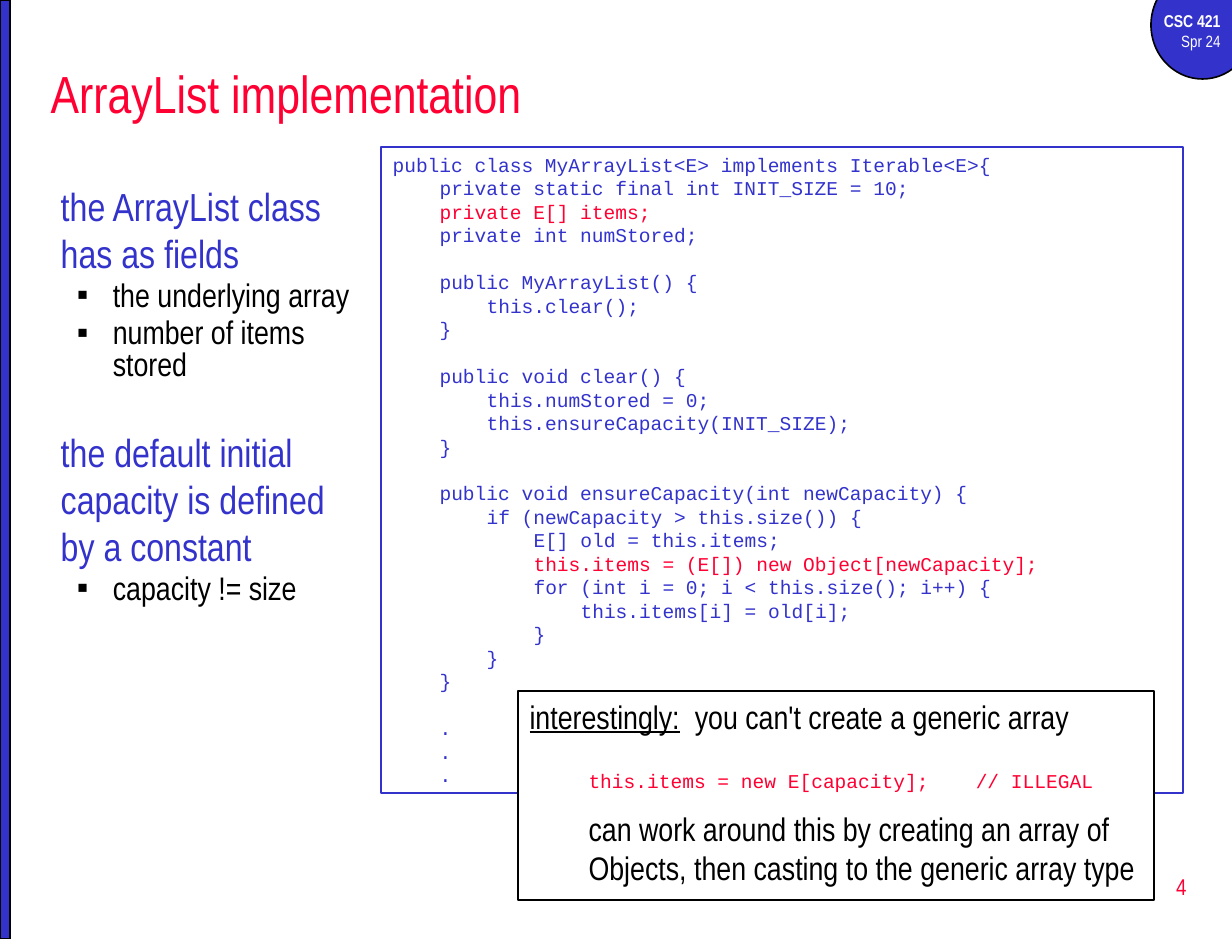
from lxml import etree
from pptx import Presentation
from pptx import util as u
from pptx.dml.color import RGBColor
from pptx.enum import shapes, text
from pptx.oxml.ns import qn

BLUE, RED, BLACK, WHITE = "3333CC", "FF0033", "000000", "FFFFFF"
NARROW, MONO = "Arial Narrow", "Courier New"
SLIDE_WIDTH, SLIDE_HEIGHT = u.Inches(10.5), u.Inches(8)
SCALE = SLIDE_WIDTH / 1232  # EMU in one px
CODE_INDENT = 47            # four monospaced characters

TITLE = "ArrayList implementation"
TOPICS = [
    ("the ArrayList class has as fields",
     ["the underlying array", "number of items stored"]),
    ("the default initial capacity is defined by a constant",
     ["capacity != size"]),
]
# Blocks of code lines: (indent level, code, colour)
CODE = [
    [(0, "public class MyArrayList<E> implements Iterable<E>{", BLUE),
     (1, "private static final int INIT_SIZE = 10;", BLUE),
     (1, "private E[] items;", RED),
     (1, "private int numStored;", BLUE)],
    [(1, "public MyArrayList() {", BLUE),
     (2, "this.clear();", BLUE),
     (1, "}", BLUE)],
    [(1, "public void clear() {", BLUE),
     (2, "this.numStored = 0;", BLUE),
     (2, "this.ensureCapacity(INIT_SIZE);", BLUE),
     (1, "}", BLUE)],
    [(1, "public void ensureCapacity(int newCapacity) {", BLUE),
     (2, "if (newCapacity > this.size()) {", BLUE),
     (3, "E[] old = this.items;", BLUE),
     (3, "this.items = (E[]) new Object[newCapacity];", RED),
     (3, "for (int i = 0; i < this.size(); i++) {", BLUE),
     (4, "this.items[i] = old[i];", BLUE),
     (3, "}", BLUE),
     (2, "}", BLUE),
     (1, "}", BLUE)],
    [(1, ".", BLUE)] * 3,
]
NOTE_LABEL, NOTE_INTRO = "interestingly:", "  you can't create a generic array"
ILLEGAL_CODE, ILLEGAL_REMARK = "this.items = new E[capacity];", "// ILLEGAL"
NOTE_ADVICE = ("can work around this by creating an array of Objects, "
               "then casting to the generic array type")
BADGE = [("CSC 421", 10.5, True), ("Spr 24", 10, False)]
PAGE_NUMBER = "4"

HEADING = {"size": 24, "color": BLUE}
ITEM = {"size": 20, "color": BLACK}


def px(length):
    return u.Emu(round(length * SCALE))


def rgb(color):
    return RGBColor.from_string(color)


def place(box, left, top, width, height):
    sides = {"left": left, "top": top, "width": width, "height": height}
    for side, length in sides.items():
        setattr(box, side, px(length))


def prepare(box, anchor=text.MSO_ANCHOR.TOP, wrap=True):
    frame = box.text_frame
    values = {"auto_size": text.MSO_AUTO_SIZE.NONE, "word_wrap": wrap,
              "vertical_anchor": anchor}
    for name, value in values.items():
        setattr(frame, name, value)
    return frame


def add_outlined(page, kind, bounds, fill, line):
    box = page.shapes.add_shape(kind, *map(px, bounds))
    box.shadow.inherit = False
    if fill:
        box.fill.solid()
        box.fill.fore_color.rgb = rgb(fill)
    else:
        box.fill.background()
    box.line.color.rgb = rgb(line)
    box.line.width = u.Pt(1)
    return box


def add_para(frame, before=0, leading=None, margin=0, hanging=0, bullet=None,
             align=text.PP_ALIGN.LEFT):
    """Start a paragraph, using the empty first one if it is still free."""
    first = frame.paragraphs[0]
    para = frame.add_paragraph() if first.runs else first
    para.alignment = align
    para.space_before = u.Pt(before)
    if leading:
        para.line_spacing = u.Pt(leading)
    props = para._p.get_or_add_pPr()
    props.set("marL", str(px(margin)))
    props.set("indent", str(px(-hanging)))
    if bullet:
        etree.SubElement(props, qn("a:buChar"), char=bullet)
    else:
        etree.SubElement(props, qn("a:buNone"))
    return para


def add_span(para, words, size, color, name=NARROW, **extra):
    span = para.add_run()
    span.text = words
    span.font.color.rgb = rgb(color)
    values = {"size": u.Pt(size), "name": name, **extra}
    for key, value in values.items():
        setattr(span.font, key, value)
    return span


def add_badge(page):
    add_outlined(page, shapes.MSO_SHAPE.OVAL, (1151, -29, 103, 108), BLUE, BLACK)
    frame = prepare(page.shapes.add_textbox(*map(px, (1134, 5, 98, 54))))
    for words, size, bold in BADGE:
        para = add_para(frame, align=text.PP_ALIGN.RIGHT)
        add_span(para, words, size, WHITE, bold=bold)


def add_page_number(page):
    box = page.shapes.add_textbox(*map(px, (941, 855, 257, 62)))
    frame = prepare(box, text.MSO_ANCHOR.MIDDLE)
    para = add_para(frame, align=text.PP_ALIGN.RIGHT)
    add_span(para, PAGE_NUMBER, 14, RED)


def fill_placeholders(page):
    title, body = page.shapes.title, page.placeholders[1]
    place(title, 39, 49, 1164, 88)
    para = add_para(prepare(title, text.MSO_ANCHOR.MIDDLE))
    add_span(para, TITLE, 32, RED)

    place(body, 49, 176, 323, 636)
    frame = prepare(body)
    for number, (heading, items) in enumerate(TOPICS):
        para = add_para(frame, before=28 if number else 0, leading=28.8)
        add_span(para, heading, **HEADING)
        for item in items:
            para = add_para(frame, before=4, leading=19.2, margin=52,
                            hanging=36, bullet="▪")
            para.level = 1
            add_span(para, item, **ITEM)


def add_code(page):
    box = add_outlined(page, shapes.MSO_SHAPE.RECTANGLE, (381, 147, 802, 646),
                       None, BLUE)
    frame = prepare(box)
    for block_number, block in enumerate(CODE):
        for line_number, (level, code, color) in enumerate(block):
            gap = 14.4 if block_number and not line_number else 0
            para = add_para(frame, before=gap, leading=14.4,
                            margin=level * CODE_INDENT)
            add_span(para, code, 12, color, MONO)


def add_note(page):
    box = add_outlined(page, shapes.MSO_SHAPE.RECTANGLE, (518, 691, 636, 209),
                       WHITE, BLACK)
    frame = prepare(box)
    para = add_para(frame, leading=24)
    add_span(para, NOTE_LABEL, **ITEM, underline=True)
    add_span(para, NOTE_INTRO, **ITEM)

    para = add_para(frame, before=20.4, leading=14.4, margin=59)
    add_span(para, ILLEGAL_CODE, 12, RED, MONO)
    gap = add_span(para, " ", 12, RED, MONO)
    gap._r.get_or_add_rPr().set("spc", "2160")  # three characters wider
    add_span(para, ILLEGAL_REMARK, 12, RED, MONO)

    para = add_para(frame, before=10, leading=24, margin=59)
    add_span(para, NOTE_ADVICE, **ITEM)


def main():
    deck = Presentation()
    deck.slide_width, deck.slide_height = SLIDE_WIDTH, SLIDE_HEIGHT
    page = deck.slides.add_slide(deck.slide_layouts[1])
    add_badge(page)
    add_outlined(page, shapes.MSO_SHAPE.RECTANGLE, (0, 0, 10, 939), BLUE, BLACK)
    add_page_number(page)
    fill_placeholders(page)
    add_code(page)
    add_note(page)
    deck.save("out.pptx")


if __name__ == "__main__":
    main()
